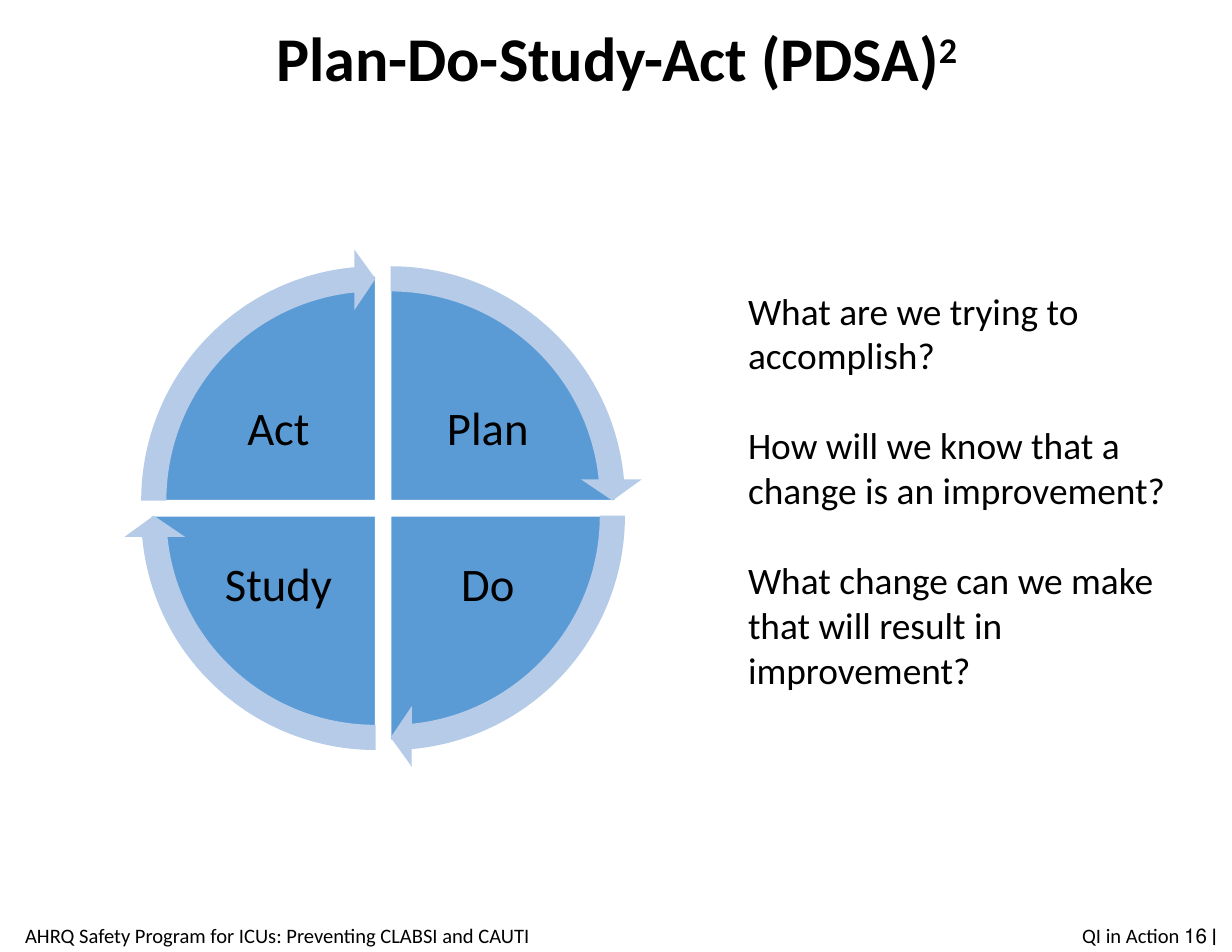
"""Builds the Plan-Do-Study-Act cycle slide."""
import pptx
import pptx.dml.color
import pptx.enum.shapes
import pptx.enum.text
import pptx.util

Pt = pptx.util.Pt
SHAPE = pptx.enum.shapes.MSO_SHAPE
ALIGN = pptx.enum.text.PP_ALIGN
ANCHOR = pptx.enum.text.MSO_ANCHOR

TITLE, CITATION = "Plan-Do-Study-Act (PDSA)", "2"
STAGES = [("Plan", 1, 0, 162), ("Do", 1, 1, 0), ("Study", 0, 1, 54), ("Act", 0, 0, 108)]
QUESTIONS = [
    "What are we trying to accomplish?",
    "How will we know that a change is an improvement?",
    "What change can we make that will result in improvement?",
]
FOOTERS = [
    ("AHRQ Safety Program for ICUs: Preventing CLABSI and CAUTI", (0, 586.8, 356.4, 28.8), ALIGN.CENTER),
    ("QI in Action ׀ 16", (612.7, 586.8, 176.4, 29.5), ALIGN.RIGHT),
]

BLACK, WHITE, BLUE, PALE_BLUE = "000000", "FFFFFF", "5B9BD5", "B5CBE7"
QUARTER = 54
ARROW_WIDTH, HEAD_ANGLE, HEAD_WIDTH = 0.05, 3.28, 0.06
CENTER_X, CENTER_Y, GAP = 246.3, 326.7, 9.7
PIE_SIZE, ARROW_SIZE = 289, 324
LABEL_SIZE, LABEL_OFFSET = (75.6, 56.2), (67.3, 50)


def color(value):
    return pptx.dml.color.RGBColor.from_string(value)


def style(paragraph, size, align, bold=False):
    paragraph.alignment = align
    font = paragraph.font
    font.name, font.size, font.bold = "Calibri", Pt(size), bold
    font.color.rgb = color(BLACK)


def add_text(slide, box, lines, size, align, anchor, margin=None, spacing=None, gap=0):
    frame = slide.shapes.add_textbox(*map(Pt, box)).text_frame
    frame.word_wrap = True
    frame.vertical_anchor = anchor
    if margin is not None:
        frame.margin_left = frame.margin_right = Pt(margin)
        frame.margin_top = frame.margin_bottom = Pt(margin)
    for index, line in enumerate(lines):
        paragraph = frame.add_paragraph() if index else frame.paragraphs[0]
        paragraph.text = line
        if index:
            paragraph.space_before = Pt(gap)
        if spacing:
            paragraph.line_spacing = spacing
        style(paragraph, size, align)


def add_sector(slide, preset, column, row, size, fill, adjustments):
    left = CENTER_X + (column - 0.5) * GAP - size / 2
    top = CENTER_Y + (row - 0.5) * GAP - size / 2
    sector = slide.shapes.add_shape(preset, Pt(left), Pt(top), Pt(size), Pt(size))
    for index, value in enumerate(adjustments):
        sector.adjustments[index] = value
    sector.shadow.inherit = False
    sector.fill.solid()
    sector.fill.fore_color.rgb = color(fill)
    return sector


def add_title(slide):
    title = slide.shapes.title
    title.left, title.top, title.width, title.height = map(Pt, (54.7, 10.8, 683.3, 57.6))
    title.text_frame.vertical_anchor = ANCHOR.MIDDLE
    heading = title.text_frame.paragraphs[0]
    heading.line_spacing = 0.9
    heading.add_run().text = TITLE
    citation = heading.add_run()
    citation.text = CITATION
    style(heading, 40, ALIGN.CENTER, bold=True)
    citation.font._element.set("baseline", "30000")


def add_cycle(slide):
    for stage, column, row, start in STAGES:
        pie = add_sector(slide, SHAPE.PIE, column, row, PIE_SIZE, BLUE,
                         (start, (start + QUARTER) % (4 * QUARTER)))
        pie.line.color.rgb = color(WHITE)
        pie.line.width = Pt(1)
        width, height = LABEL_SIZE
        left = CENTER_X + (2 * column - 1) * LABEL_OFFSET[0] - width / 2
        top = CENTER_Y + (2 * row - 1) * LABEL_OFFSET[1] - height / 2
        add_text(slide, (left, top, width, height), [stage], 30, ALIGN.CENTER,
                 ANCHOR.MIDDLE, margin=3, spacing=0.9)
    for _, column, row, start in STAGES:
        arrow = add_sector(slide, SHAPE.CIRCULAR_ARROW, column, row, ARROW_SIZE, PALE_BLUE,
                           (ARROW_WIDTH, HEAD_ANGLE, start + QUARTER - HEAD_ANGLE, start, HEAD_WIDTH))
        arrow.line.fill.background()


def main():
    deck = pptx.Presentation()
    deck.slide_width, deck.slide_height = Pt(792), Pt(612)
    slide = deck.slides.add_slide(deck.slide_layouts[5])
    add_title(slide)
    add_cycle(slide)
    add_text(slide, (473.8, 181.4, 311.8, 298), QUESTIONS, 24, ALIGN.LEFT, ANCHOR.TOP, gap=29)
    for text, box, align in FOOTERS:
        add_text(slide, box, [text], 13.2, align, ANCHOR.MIDDLE)
    deck.save("out.pptx")


if __name__ == "__main__":
    main()
